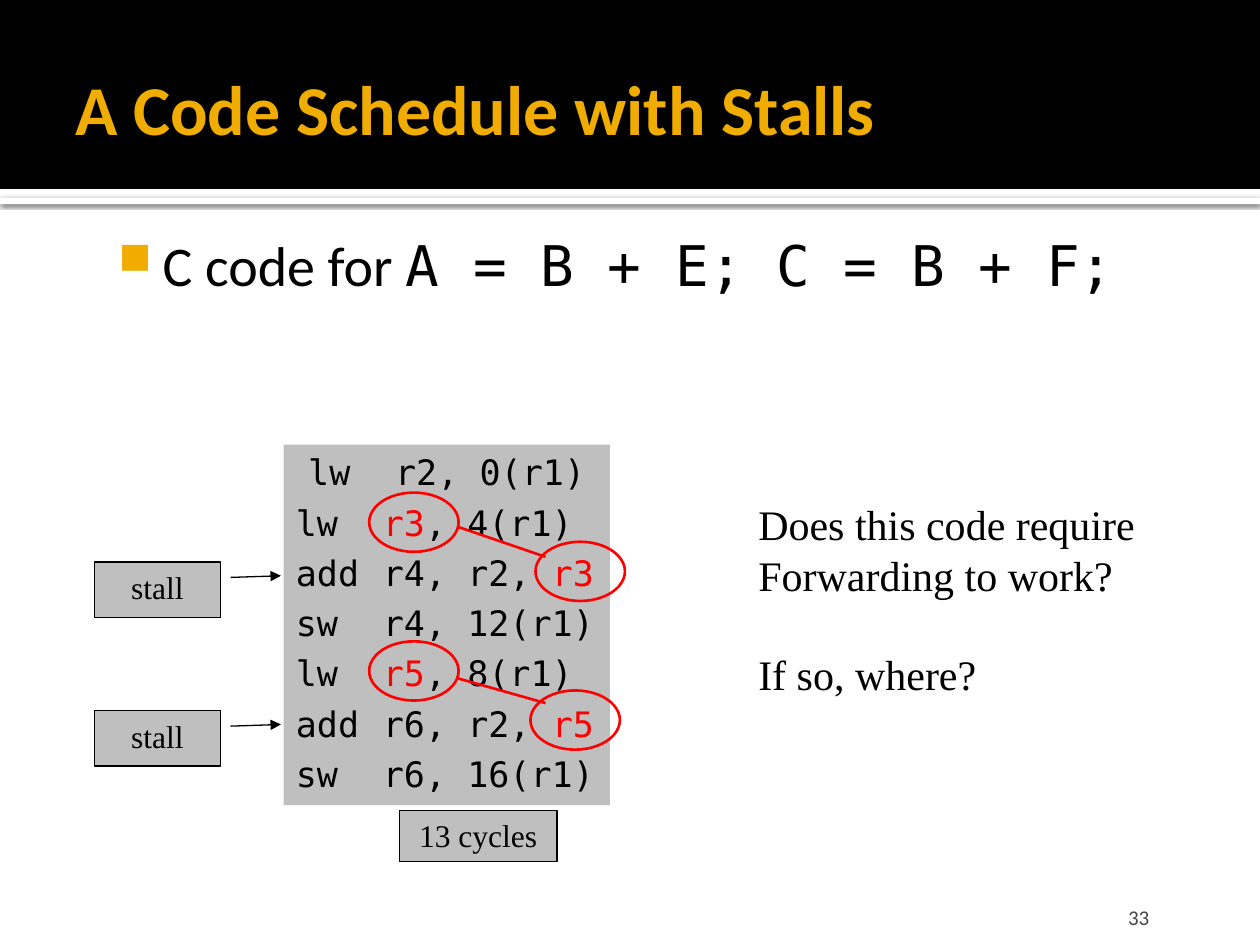
from lxml import etree
from pptx import Presentation
from pptx.dml.color import RGBColor
from pptx.enum.shapes import MSO_CONNECTOR, MSO_SHAPE
from pptx.enum.text import MSO_ANCHOR, PP_ALIGN
from pptx.oxml.ns import qn
from pptx.util import Inches, Pt

RECT = MSO_SHAPE.RECTANGLE
OVAL = MSO_SHAPE.OVAL
CALLOUT = MSO_SHAPE.LINE_CALLOUT_1
STRAIGHT = MSO_CONNECTOR.STRAIGHT
TOP, MIDDLE, BOTTOM = MSO_ANCHOR.TOP, MSO_ANCHOR.MIDDLE, MSO_ANCHOR.BOTTOM
RIGHT = PP_ALIGN.RIGHT

SANS, MONO, SERIF = "Calibri", "DejaVu Sans Mono", "Times New Roman"
BLACK, WHITE, GRAY = "000000", "FFFFFF", "BFBFBF"
RED, GOLD, DARK = "FF0000", "F0AD00", "454545"

CODE = [
    [("lw\tr2, 0(r1)", BLACK)],
    [("lw\t", BLACK), ("r3", RED), (", 4(r1)", BLACK)],
    [("add\tr4, r2, ", BLACK), ("r3", RED)],
    [("sw\tr4, 12(r1)", BLACK)],
    [("lw\t", BLACK), ("r5", RED), (", 8(r1)", BLACK)],
    [("add\tr6, r2, ", BLACK), ("r5", RED)],
    [("sw\tr6, 16(r1)", BLACK)],
]
STALLS = [4.46, 5.64]
CIRCLES = [(2.93, 3.91), (4.25, 4.3), (2.93, 5.09), (4.21, 5.48)]
LINKS = [(3.63, 4.18, 4.33, 4.42), (3.62, 5.38, 4.33, 5.58)]


def rgb(color):
    return RGBColor.from_string(color)


def add_xml(parent, tag, **attrs):
    return etree.SubElement(parent, qn(tag), attrs)


def add_shape(s, kind, box, fill=None, line=None, width=0.75):
    sp = s.shapes.add_shape(kind, *map(Inches, box))
    sp.shadow.inherit = False
    if fill:
        sp.fill.solid()
        sp.fill.fore_color.rgb = rgb(fill)
    else:
        sp.fill.background()
    if line:
        sp.line.color.rgb = rgb(line)
        sp.line.width = Pt(width)
    else:
        sp.line.fill.background()
    return sp


def set_frame(sp, anchor=TOP, insets=(0.1, 0.05, 0.1, 0.05)):
    tf = sp.text_frame
    tf.word_wrap = True
    tf.vertical_anchor = anchor
    tf.margin_left, tf.margin_top, tf.margin_right, tf.margin_bottom = map(Inches, insets)
    return tf


def add_textbox(s, box, **frame):
    return set_frame(s.shapes.add_textbox(*map(Inches, box)), **frame)


def add_run(p, text, size, font, color=BLACK, bold=False):
    p.alignment = p.alignment or PP_ALIGN.LEFT
    r = p.add_run()
    r.text = text
    r.font.size = Pt(size)
    r.font.name = font
    r.font.bold = bold
    r.font.color.rgb = rgb(color)


def add_header(s):
    band = add_shape(s, RECT, (0, 1.57, 10, 0.05), WHITE)
    shadow = add_xml(band._element.spPr.find(qn("a:effectLst")), "a:outerShdw",
                     blurRad=str(Pt(2.5)), dist=str(Pt(0.8)), dir="5400000",
                     algn="tl", rotWithShape="0")
    add_xml(add_xml(shadow, "a:srgbClr", val=BLACK), "a:alpha", val="60000")
    add_shape(s, RECT, (0, 0, 10, 1.5), BLACK)
    tf = add_textbox(s, (0.5, 0.17, 9, 1.37), anchor=MIDDLE, insets=(0.1, 0.05, 0.05, 0.05))
    add_run(tf.paragraphs[0], "A Code Schedule with Stalls", 40, SANS, GOLD, True)


def add_bullet(s):
    tf = add_textbox(s, (0.75, 1.73, 9.05, 2.02), insets=(0.06, 0.1, 0.1, 0.05))
    p = tf.paragraphs[0]
    add_run(p, "C code for ", 32, SANS)
    add_run(p, "A = B + E; C = B + F;", 32, MONO)
    pPr = p._p.get_or_add_pPr()
    pPr.set("marL", str(Inches(0.48)))
    pPr.set("indent", str(Inches(-0.35)))
    add_xml(add_xml(pPr, "a:buClr"), "a:srgbClr", val=GOLD)
    add_xml(pPr, "a:buSzPct", val="80000")
    add_xml(pPr, "a:buChar", char="■")


def add_code(s):
    tf = set_frame(add_shape(s, RECT, (2.25, 3.53, 2.59, 2.86), GRAY))
    for i, parts in enumerate(CODE):
        p = tf.add_paragraph() if i else tf.paragraphs[0]
        p.space_before = Pt(4.7 if i else 0)
        for text, color in parts:
            add_run(p, text, 20, MONO, color)
        tabs = add_xml(p._p.get_or_add_pPr(), "a:tabLst")
        add_xml(tabs, "a:tab", pos=str(Inches(0.69)), algn="l")


def add_label(s, kind, box, text):
    sp = add_shape(s, kind, box, GRAY, BLACK)
    add_run(set_frame(sp).paragraphs[0], text, 18, SERIF)
    return sp


def add_stall(s, top):
    sp = add_label(s, CALLOUT, (0.75, top, 1, 0.44), "stall")
    for i, value in enumerate((0.285, 1.083, 0.253, 1.479)):
        sp.adjustments[i] = round(value, 2)
    add_xml(sp.line._get_or_add_ln(), "a:tailEnd", type="triangle")


def add_link(s, ends):
    link = s.shapes.add_connector(STRAIGHT, *map(Inches, ends))
    link.line.color.rgb = rgb(RED)
    link.line.width = Pt(1.5)
    add_xml(link._element.spPr, "a:effectLst")


def add_question(s):
    tf = add_textbox(s, (5.92, 3.91, 3.34, 1.72))
    tf.text = ""
    add_run(tf.paragraphs[0], "Does this code require", 24, SERIF)
    add_run(tf.add_paragraph(), "Forwarding to work?", 24, SERIF)
    p = tf.add_paragraph()
    p.space_before = Pt(28)
    add_run(p, "If so, where?", 24, SERIF)


def add_number(s):
    tf = add_textbox(s, (8.42, 7.08, 0.8, 0.3), anchor=BOTTOM, insets=(0.1, 0.05, 0.1, 0))
    p = tf.paragraphs[0]
    p.alignment = RIGHT
    add_run(p, "33", 12, SANS, DARK)


def main():
    prs = Presentation()
    prs.slide_width, prs.slide_height = Inches(10), Inches(7.5)
    s = prs.slides.add_slide(prs.slide_layouts[6])
    add_header(s)
    add_bullet(s)
    add_code(s)
    for top in STALLS:
        add_stall(s, top)
    for left, top in CIRCLES:
        add_shape(s, OVAL, (left, top, 0.71, 0.47), line=RED, width=1.5)
    for ends in LINKS:
        add_link(s, ends)
    add_label(s, RECT, (3.17, 6.43, 1.25, 0.41), "13 cycles")
    add_question(s)
    add_number(s)
    prs.save("out.pptx")


if __name__ == "__main__":
    main()
